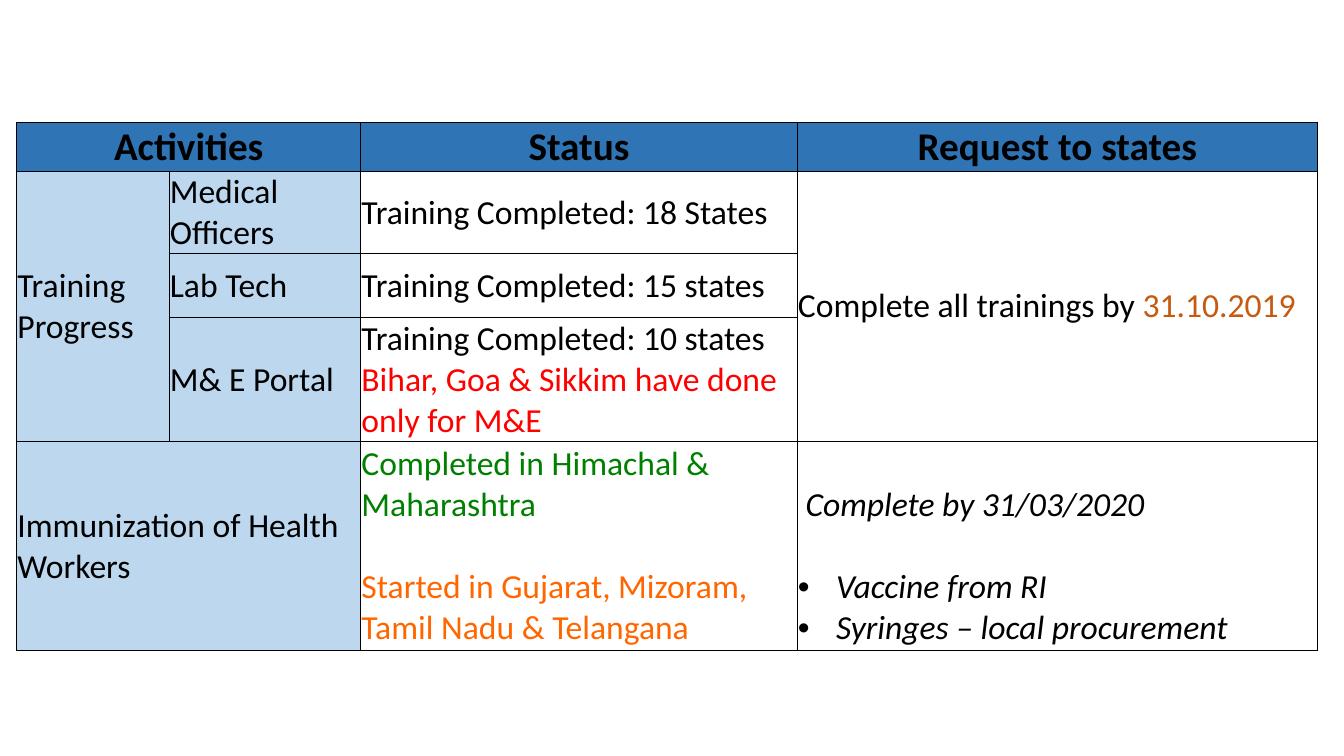
from lxml import etree
from pptx import Presentation
from pptx import util as u
from pptx.dml.color import RGBColor
from pptx.enum import text as t
from pptx.oxml.ns import qn

INK = {
    "black": "000000", "head": "2F75B5", "side": "BDD7EE", "rust": "C55A11",
    "red": "FF0000", "green": "008000", "orange": "FF6600",
}
COLS = (3.84, 4.83, 11, 13.11)
ROWS = (1.22, 2.07, 1.6, 3.12, 5.28)
LINE = 29.3


def write(para, words, size=24, ink="black", bold=False, italic=False,
          gap=0, left=0, bullet=False, align=t.PP_ALIGN.LEFT):
    props = para._p.get_or_add_pPr()
    if bullet:
        left = 0.96
        props.set("indent", str(-u.Cm(left)))
        etree.SubElement(props, qn("a:buFont"), typeface="Arial")
        etree.SubElement(props, qn("a:buChar"), char="•")
    if left:
        props.set("marL", str(u.Cm(left)))
    if gap:
        para.space_before = u.Pt(gap)
    para.alignment = align
    run = para.add_run()
    run.text = words
    font = run.font
    font.name, font.size = "Calibri", u.Pt(size)
    font.bold, font.italic = bold, italic
    font.color.rgb = RGBColor.from_string(INK[ink])


class Deck:
    def __init__(self):
        self.file = Presentation()
        self.file.slide_width = u.Cm(33.87)
        self.file.slide_height = u.Cm(19.05)
        self.slide = self.file.slides.add_slide(self.file.slide_layouts[6])

    def table(self, left, top, cols, rows):
        frame = self.slide.shapes.add_table(
            len(rows), len(cols), u.Cm(left), u.Cm(top),
            u.Cm(sum(cols)), u.Cm(sum(rows)))
        grid = frame.table
        grid.first_row = grid.horz_banding = False
        for col, width in zip(grid.columns, cols):
            col.width = u.Cm(width)
        for row, height in zip(grid.rows, rows):
            row.height = u.Cm(height)
        for cell in grid.iter_cells():
            self.border(cell)
            cell.fill.background()
        return grid

    def border(self, cell):
        props = cell._tc.get_or_add_tcPr()
        for side in ("lnL", "lnR", "lnT", "lnB"):
            line = etree.SubElement(props, qn("a:" + side), w=str(u.Pt(0.5)))
            fill = etree.SubElement(line, qn("a:solidFill"))
            etree.SubElement(fill, qn("a:srgbClr"), val=INK["black"])

    def cell(self, cell, *paras, fill=None, anchor=t.MSO_ANCHOR.MIDDLE, top=0):
        cell.margin_left = cell.margin_right = u.Cm(0.02)
        cell.margin_top, cell.margin_bottom = u.Cm(top + 0.02), 0
        cell.vertical_anchor = anchor
        if fill:
            cell.fill.solid()
            cell.fill.fore_color.rgb = RGBColor.from_string(INK[fill])
        frame = cell.text_frame
        for i, (words, style) in enumerate(paras):
            para = frame.add_paragraph() if i else frame.paragraphs[0]
            write(para, words, **style)


def main():
    deck = Deck()
    grid = deck.table(0.42, 3.08, COLS, ROWS)
    for first, last in (((0, 0), (0, 1)), ((1, 0), (3, 0)),
                        ((1, 3), (3, 3)), ((4, 0), (4, 1))):
        grid.cell(*first).merge(grid.cell(*last))

    title = dict(size=28, bold=True, align=t.PP_ALIGN.CENTER)
    for col, words in ((0, "Activities"), (2, "Status"), (3, "Request to states")):
        deck.cell(grid.cell(0, col), (words, title), fill="head",
                  anchor=t.MSO_ANCHOR.BOTTOM)

    for row, col, words in ((1, 0, "Training Progress"),
                            (1, 1, "Medical Officers"),
                            (2, 1, "Lab Tech"),
                            (3, 1, "M& E Portal"),
                            (4, 0, "Immunization of Health Workers")):
        deck.cell(grid.cell(row, col), (words, {}), fill="side")

    status = (
        [("Training Completed: 18 States", {})],
        [("Training Completed: 15 states", {})],
        [("Training Completed: 10 states", {}),
         ("Bihar, Goa & Sikkim have done only for M&E", dict(ink="red"))],
        [("Completed in Himachal & Maharashtra", dict(ink="green")),
         ("Started in Gujarat, Mizoram, Tamil Nadu & Telangana",
          dict(ink="orange", gap=LINE))],
    )
    for row, paras in enumerate(status, 1):
        deck.cell(grid.cell(row, 2), *paras)

    due = grid.cell(1, 3)
    deck.cell(due, ("Complete all trainings by ", {}))
    write(due.text_frame.paragraphs[0], "31.10.2019", ink="rust")
    deck.cell(grid.cell(4, 3),
              ("Complete by 31/03/2020", dict(italic=True, left=0.19)),
              ("Vaccine from RI", dict(italic=True, bullet=True, gap=LINE)),
              ("Syringes – local procurement", dict(italic=True, bullet=True)),
              top=1.03)
    deck.file.save("out.pptx")


if __name__ == "__main__":
    main()
